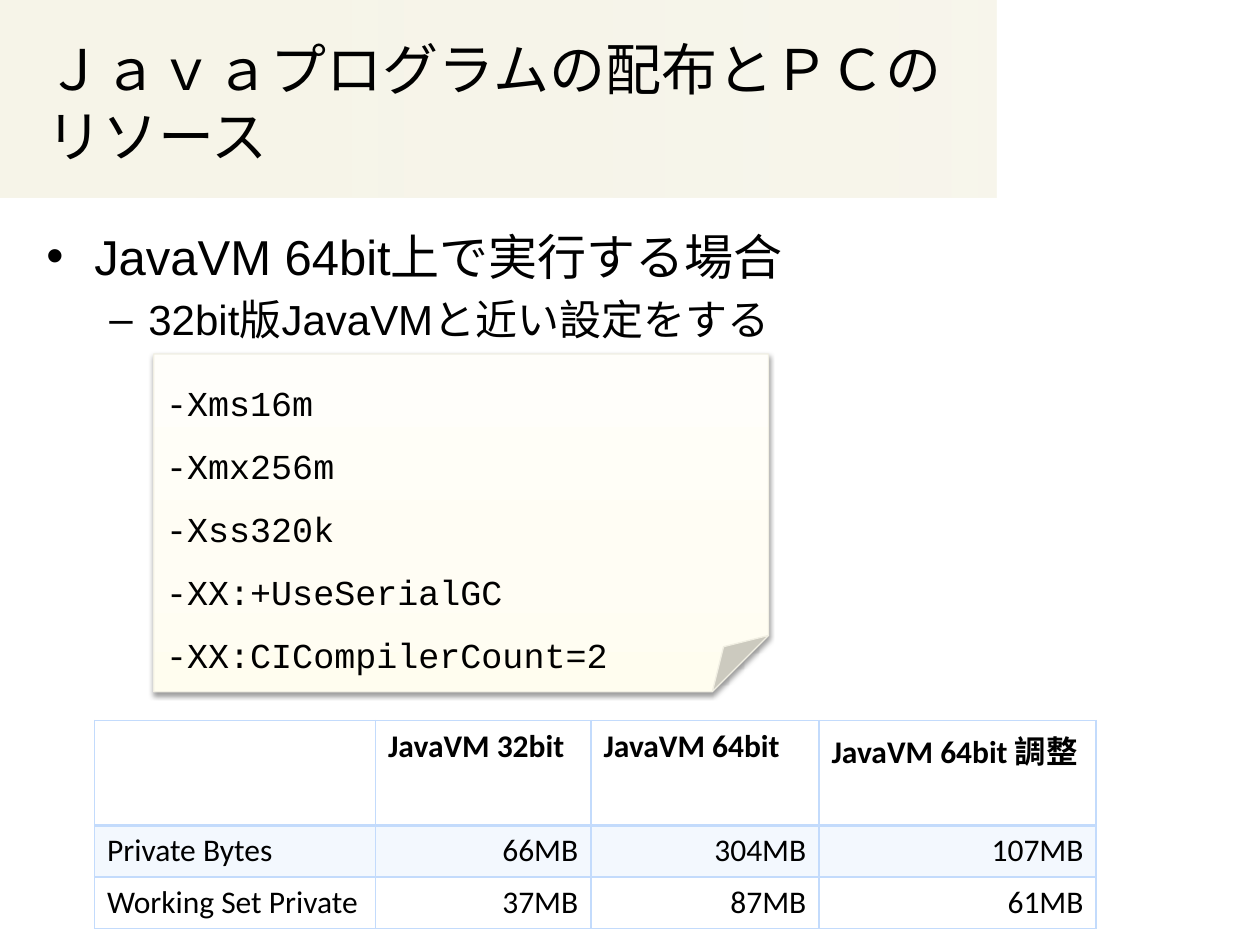
from lxml import etree
from pptx import Presentation
from pptx import util as u
from pptx.dml.color import RGBColor
from pptx.enum import shapes, text
from pptx.oxml import parse_xml
from pptx.oxml.ns import nsdecls, qn

NS = nsdecls("a")
BLACK, EDGE = "000000", "C3DBFC"


def hue(code):
    return RGBColor.from_string(code)


def blend(shape, angle, stops):
    """Fill a shape with a linear gradient of (percent, colour, opacity) stops."""
    shape.fill.gradient()
    old = shape._element.spPr.find(qn("a:gradFill"))
    marks = "".join(
        f'<a:gs pos="{at * 1000}"><a:srgbClr val="{code}">'
        f'<a:alpha val="{alpha * 1000}"/></a:srgbClr></a:gs>'
        for at, code, alpha in stops)
    new = parse_xml(f'<a:gradFill {NS} rotWithShape="1"><a:gsLst>{marks}</a:gsLst>'
                    f'<a:lin ang="{angle * 60000}" scaled="0"/></a:gradFill>')
    old.getparent().replace(old, new)


deck = Presentation()
deck.slide_width, deck.slide_height = u.Inches(10), u.Inches(7.5)
slide = deck.slides.add_slide(deck.slide_layouts[5])
tree = slide.shapes

# Title and the band behind it
title = tree.title
band = tree.add_shape(shapes.MSO_SHAPE.RECTANGLE, 0, 0, u.Inches(7.91), u.Inches(1.57))
band.shadow.inherit = False
band.line.fill.background()
blend(band, 0, [(0, "F6F4E8", 80), (0, "F6F4E8", 100), (100, "F6F4E8", 85)])
title._element.addprevious(band._element)

title.left, title.top = u.Inches(0.27), u.Inches(0.3)
title.width, title.height = u.Inches(7.48), u.Inches(1.01)
frame = title.text_frame
frame.text = "Ｊａｖａプログラムの配布とＰＣのリソース"
frame.auto_size = text.MSO_AUTO_SIZE.NONE
frame.vertical_anchor = text.MSO_ANCHOR.MIDDLE
para = frame.paragraphs[0]
para.alignment = text.PP_ALIGN.LEFT
para.font.size, para.font.name = u.Pt(32), "Arial"
para.font.color.rgb = hue(BLACK)

# Bulleted body
body = tree.add_textbox(u.Inches(0.27), u.Inches(1.75), u.Inches(9), u.Inches(4.13))
frame = body.text_frame
frame.word_wrap = True
points = [("JavaVM 64bit上で実行する場合", "•", 28, 0.38, 0.38, 0),
          ("32bit版JavaVMと近い設定をする", "–", 24, 0.81, 0.31, 4.8)]
for i, (words, mark, size, left, hang, gap) in enumerate(points):
    para = frame.add_paragraph() if i else frame.paragraphs[0]
    para.text, para.level = words, i
    props = para._p.get_or_add_pPr()
    props.set("marL", str(u.Inches(left)))
    props.set("indent", str(-u.Inches(hang)))
    etree.SubElement(props, qn("a:buFont")).set("typeface", "Arial")
    etree.SubElement(props, qn("a:buChar")).set("char", mark)
    para.space_before = u.Pt(gap)
    para.font.size, para.font.name = u.Pt(size), "Arial"
    para.font.color.rgb = hue(BLACK)

# Note with the VM options
note = tree.add_shape(shapes.MSO_SHAPE.FOLDED_CORNER, u.Inches(1.22), u.Inches(2.81),
                      u.Inches(4.88), u.Inches(2.68))
blend(note, 270, [(0, "FFFDEF", 100), (35, "FFFDF4", 100), (100, "FFFEFA", 100)])
note.line.color.rgb, note.line.width = hue("F1EFE3"), u.Pt(0.75)
note.shadow.inherit = False
note._element.spPr.find(qn("a:effectLst")).append(parse_xml(
    f'<a:outerShdw {NS} blurRad="{u.Pt(3.1)}" dist="{u.Pt(1.6)}" dir="5400000" '
    f'rotWithShape="0"><a:srgbClr val="{BLACK}"><a:alpha val="38000"/></a:srgbClr>'
    '</a:outerShdw>'))
frame = note.text_frame
frame.vertical_anchor = text.MSO_ANCHOR.TOP
flags = ["-Xms16m", "-Xmx256m", "-Xss320k", "-XX:+UseSerialGC", "-XX:CICompilerCount=2"]
for i, flag in enumerate(flags):
    para = frame.add_paragraph() if i else frame.paragraphs[0]
    para.text, para.line_spacing = flag, 1.5
    para.alignment = text.PP_ALIGN.LEFT
    para.font.size, para.font.name = u.Pt(20), "Courier New"
    para.font.color.rgb = hue(BLACK)

# Memory table; the header row holds two lines
rows = [["", "JavaVM 32bit", "JavaVM 64bit", "JavaVM 64bit 調整"],
        ["Private Bytes", "66MB", "304MB", "107MB"],
        ["Working Set Private", "37MB", "87MB", "61MB"]]
grid = tree.add_table(3, 4, u.Inches(0.75), u.Inches(5.72),
                      u.Inches(7.95), u.Inches(1.65)).table
for col, width in zip(grid.columns, [2.23, 1.71, 1.81, 2.2]):
    col.width = u.Inches(width)
for r, row in enumerate(rows):
    grid.rows[r].height = u.Inches(0.41 if r else 0.83)
    for c, words in enumerate(row):
        cell = grid.cell(r, c)
        cell.text = words
        para = cell.text_frame.paragraphs[0]
        para.font.size, para.font.name = u.Pt(18), "Calibri"
        para.font.bold = r == 0
        para.font.color.rgb = hue(BLACK)
        if r and c:
            para.alignment = text.PP_ALIGN.RIGHT
        thick = {(0, "B"): 2, (1, "T"): 2}
        for side in "LRTB":
            cell._tc.get_or_add_tcPr().append(parse_xml(
                f'<a:ln{side} {NS} w="{u.Pt(thick.get((r, side), 1))}"><a:solidFill>'
                f'<a:srgbClr val="{EDGE}"/></a:solidFill></a:ln{side}>'))
        if r == 1:
            cell.fill.solid()
            cell.fill.fore_color.rgb = hue("F3F8FE")
        else:
            cell.fill.background()

deck.save("out.pptx")
